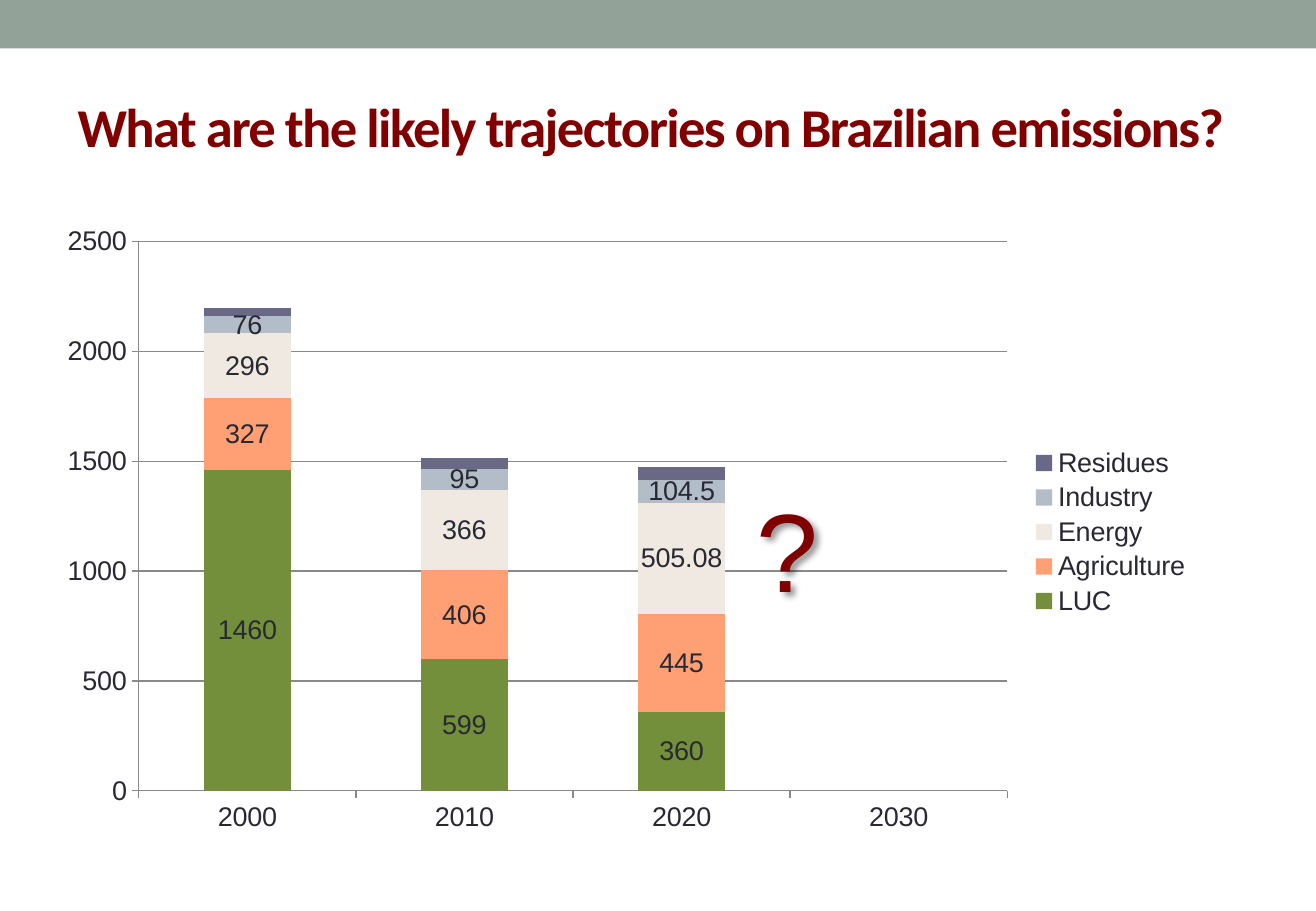
from lxml import etree
from pptx import Presentation
from pptx.chart.data import CategoryChartData
from pptx.dml.color import RGBColor
from pptx.enum.chart import XL_CHART_TYPE, XL_LEGEND_POSITION, XL_TICK_MARK
from pptx.enum.shapes import MSO_SHAPE
from pptx.enum.text import MSO_ANCHOR
from pptx.oxml import parse_xml
from pptx.util import Inches, Pt

STACKED = XL_CHART_TYPE.COLUMN_STACKED
RIGHT = XL_LEGEND_POSITION.RIGHT
OUTSIDE = XL_TICK_MARK.OUTSIDE
MIDDLE = MSO_ANCHOR.MIDDLE
INK, MAROON, GRID = "292934", "800000", "898989"
DRAWING = 'xmlns:a="http://schemas.openxmlformats.org/drawingml/2006/main"'
CHART = 'xmlns:c="http://schemas.openxmlformats.org/drawingml/2006/chart"'


def rgb(value):
    return RGBColor.from_string(value)


def style(font, size, color, name="Arial", bold=False):
    settings = {"size": Pt(size), "name": name, "bold": bold}
    for key, value in settings.items():
        setattr(font, key, value)
    font.color.rgb = rgb(color)


prs = Presentation()
prs.slide_width, prs.slide_height = Inches(10.83), Inches(7.5)
slide = prs.slides.add_slide(prs.slide_layouts[6])

band = slide.shapes.add_shape(MSO_SHAPE.RECTANGLE, 0, 0, prs.slide_width, Inches(0.4))
band.shadow.inherit = False
band.fill.solid()
band.fill.fore_color.rgb = rgb("93A299")
band.line.fill.background()

title = slide.shapes.add_textbox(Inches(0.54), Inches(0.58), Inches(9.75), Inches(0.91))
title.text_frame.word_wrap = True
title.text_frame.vertical_anchor = MIDDLE
question = title.text_frame.paragraphs[0].add_run()
question.text = "What are the likely trajectories on Brazilian emissions?"
style(question.font, 32.4, MAROON, "Calibri", True)
question.font._element.set("spc", "-100")

# Emissions by sector: values per decade, colour, labels shown
sectors = [
    ("LUC", (1460, 599, 360, None), "738F3B", True),
    ("Agriculture", (327, 406, 445, None), "FFA074", True),
    ("Energy", (296, 366, 505.08, None), "EFE9E1", True),
    ("Industry", (76, 95, 104.5, None), "B3BDC8", True),
    ("Residues", (40, 50, 60, None), "696986", False),
]
data = CategoryChartData()
data.categories = [str(year) for year in range(2000, 2031, 10)]
for sector, values, _, _ in sectors:
    data.add_series(sector, values)
emissions = slide.shapes.add_chart(
    STACKED, Inches(0.38), Inches(1.78), Inches(9.53), Inches(5.2), data
).chart
emissions.has_title = False
style(emissions.font, 16, INK)
emissions.has_legend = True
emissions.legend.position = RIGHT
emissions.legend.include_in_layout = False
style(emissions.legend.font, 16, INK)

columns = emissions.plots[0]
columns.gap_width, columns.overlap = 150, 100
columns.vary_by_categories = False
for series, (_, _, color, labelled) in zip(columns.series, sectors):
    series.format.fill.solid()
    series.format.fill.fore_color.rgb = rgb(color)
    if labelled:
        series.data_labels.show_value = True
        style(series.data_labels.font, 16, INK)

amounts = emissions.value_axis
amounts.minimum_scale, amounts.maximum_scale, amounts.major_unit = 0, 2500, 500
amounts.has_major_gridlines = True
amounts.major_gridlines.format.line.color.rgb = rgb(GRID)
for axis in (amounts, emissions.category_axis):
    axis.major_tick_mark = OUTSIDE
    axis.format.line.color.rgb = rgb(GRID)
    style(axis.tick_labels.font, 16, INK)

plot_area = emissions._chartSpace.chart.plotArea
for old in plot_area.findall("{*}layout"):
    plot_area.remove(old)
shares = {"x": 0.08, "y": 0.04, "w": 0.75, "h": 0.87}
placing = "".join(f'<c:{side}Mode val="edge"/>' for side in "xy")
placing += "".join(f'<c:{side} val="{share}"/>' for side, share in shares.items())
plot_area.insert(0, parse_xml(
    f'<c:layout {CHART}><c:manualLayout><c:layoutTarget val="inner"/>'
    f"{placing}</c:manualLayout></c:layout>"
))

unknown = slide.shapes.add_textbox(Inches(6.13), Inches(3.91), Inches(0.7), Inches(1.21))
unknown.text_frame.word_wrap = False
mark = unknown.text_frame.paragraphs[0].add_run()
mark.text = "?"
style(mark.font, 66, MAROON)
unknown._element.spPr.append(etree.fromstring(
    f'<a:effectLst {DRAWING}><a:outerShdw blurRad="50800" dist="38100" dir="2700000">'
    '<a:srgbClr val="000000"><a:alpha val="40000"/></a:srgbClr>'
    "</a:outerShdw></a:effectLst>"
))

prs.save("out.pptx")
